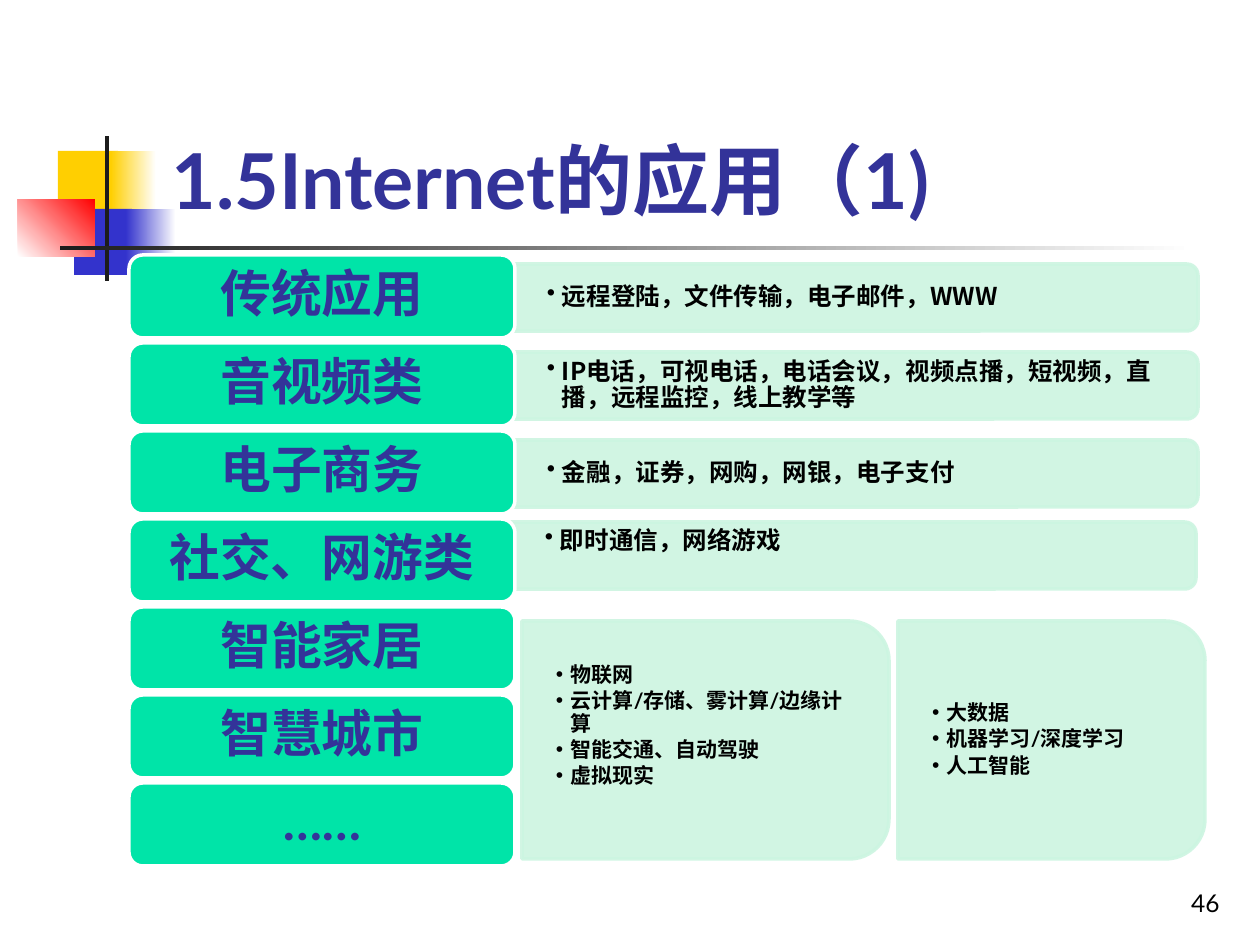
"""Build the slide on Internet applications, with category labels and example panels."""
from dataclasses import dataclass
from typing import NamedTuple

from lxml import etree
from pptx import Presentation
from pptx import util as u
from pptx.dml.color import RGBColor
from pptx.enum import shapes, text
from pptx.oxml import ns

EMU_PER_PX = 914400 / 126


@dataclass(frozen=True)
class Theme:
    latin: str = "Lato"
    asian: str = "Noto Sans CJK SC"
    navy: str = "333399"
    black: str = "000000"
    white: str = "FFFFFF"
    dark: str = "1C1C1C"
    yellow: str = "FFCF01"
    blue: str = "3333CC"
    red: str = "FF0000"
    green: str = "00E4A8"
    mint: str = "CCF5E1"
    title_size: int = 44
    label_size: int = 29
    bar_size: int = 14
    card_size: int = 12
    number_size: int = 14


class Box(NamedTuple):
    left: int
    top: int
    width: int
    height: int


@dataclass(frozen=True)
class Ornament:
    box: Box
    colors: tuple[str, ...]
    angle: int = 0


@dataclass(frozen=True)
class Panel:
    box: Box
    items: tuple[str, ...]
    lift: int = 0
    latin: str = "Lato"


THEME = Theme()
ORNAMENTS = (
    Ornament(Box(58, 151, 60, 66), (THEME.yellow,)),
    Ornament(Box(111, 151, 45, 66), (THEME.yellow, THEME.white)),
    Ornament(Box(74, 209, 58, 66), (THEME.blue,)),
    Ornament(Box(126, 209, 50, 66), (THEME.blue, THEME.white)),
    Ornament(Box(18, 199, 77, 58), (THEME.white, THEME.red), 45),
    Ornament(Box(105, 136, 4, 145), (THEME.dark,)),
    Ornament(Box(60, 246, 1134, 4), (THEME.dark, THEME.white)),
)
ROW_PITCH = 88
FIRST_LABEL = Box(129, 255, 386, 83)
LABELS = ("传统应用", "音视频类", "电子商务", "社交、网游类", "智能家居", "智慧城市", "……")
BARS = (
    Panel(Box(513, 264, 685, 67), ("远程登陆，文件传输，电子邮件，WWW",), latin=THEME.asian),
    Panel(Box(513, 264 + ROW_PITCH, 685, 67),
          ("IP电话，可视电话，电话会议，视频点播，短视频，直播，远程监控，线上教学等",),
          latin=THEME.asian),
    Panel(Box(513, 264 + 2 * ROW_PITCH, 685, 67), ("金融，证券，网购，网银，电子支付",)),
    Panel(Box(511, 522, 685, 67), ("即时通信，网络游戏",), lift=14),
)
CARDS = (
    Panel(Box(522, 621, 367, 238),
          ("物联网", "云计算/存储、雾计算/边缘计算", "智能交通、自动驾驶", "虚拟现实"), lift=14),
    Panel(Box(898, 621, 307, 238), ("大数据", "机器学习/深度学习", "人工智能")),
)


def px(length: float) -> u.Emu:
    return u.Emu(round(length * EMU_PER_PX))


def place(shape, box: Box) -> None:
    shape.left, shape.top, shape.width, shape.height = map(px, box)


def bring_forward(shape) -> None:
    shape.element.getparent().append(shape.element)


def set_font(para, size: int, color: str, bold: bool = True, latin: str = THEME.latin) -> None:
    font = para.font
    font.size, font.bold, font.name = u.Pt(size), bold, latin
    font.color.rgb = RGBColor.from_string(color)
    properties = para._p.pPr.find(ns.qn("a:defRPr"))
    etree.SubElement(properties, ns.qn("a:ea"), typeface=THEME.asian)


def set_frame(shape, anchor: text.MSO_ANCHOR):
    frame = shape.text_frame
    frame.word_wrap = True
    frame.auto_size = text.MSO_AUTO_SIZE.NONE
    frame.vertical_anchor = anchor
    return frame


def add_filled(slide, kind: shapes.MSO_SHAPE, box: Box, color: str):
    shape = slide.shapes.add_shape(kind, *map(px, box))
    shape.shadow.inherit = False
    shape.fill.solid()
    shape.fill.fore_color.rgb = RGBColor.from_string(color)
    shape.line.fill.background()
    return shape


def set_line(shape, color: str) -> None:
    shape.line.color.rgb = RGBColor.from_string(color)
    shape.line.width = u.Pt(2)


def draw_ornament(slide, ornament: Ornament) -> None:
    shape = add_filled(slide, shapes.MSO_SHAPE.RECTANGLE, ornament.box, ornament.colors[0])
    if len(ornament.colors) > 1:
        shape.fill.gradient()
        shape.fill.gradient_angle = ornament.angle
        for stop, color in zip(shape.fill.gradient_stops, ornament.colors):
            stop.color.rgb = RGBColor.from_string(color)


def draw_label(slide, box: Box, caption: str) -> None:
    shape = add_filled(slide, shapes.MSO_SHAPE.ROUNDED_RECTANGLE, box, THEME.green)
    set_line(shape, THEME.white)
    para = set_frame(shape, text.MSO_ANCHOR.MIDDLE).paragraphs[0]
    para.text = caption
    para.alignment = text.PP_ALIGN.CENTER
    para.line_spacing = 0.9
    set_font(para, THEME.label_size, THEME.navy)


def draw_panel(slide, box: Box) -> None:
    center_x, center_y = box.left + box.width / 2, box.top + box.height / 2
    upright = Box(center_x - box.height / 2, center_y - box.width / 2, box.height, box.width)
    shape = add_filled(slide, shapes.MSO_SHAPE.ROUND_2_SAME_RECTANGLE, upright, THEME.mint)
    shape.rotation = 90
    set_line(shape, THEME.mint)
    for color in shape.element.spPr.iter(ns.qn("a:srgbClr")):
        etree.SubElement(color, ns.qn("a:alpha"), val="90000")


def write_list(holder, panel: Panel, size: int) -> None:
    place(holder, panel.box._replace(top=panel.box.top - panel.lift))
    frame = set_frame(holder, text.MSO_ANCHOR.MIDDLE)
    frame.margin_left = frame.margin_right = px(34)
    frame.margin_top = frame.margin_bottom = px(18)
    for index, item in enumerate(panel.items):
        para = frame.add_paragraph() if index else frame.paragraphs[0]
        para.text = item
        para.alignment = text.PP_ALIGN.LEFT
        para.line_spacing = 0.9
        para.space_before, para.space_after = u.Pt(0), u.Pt(2)
        properties = para._p.get_or_add_pPr()
        properties.set("marL", str(px(15)))
        properties.set("indent", str(-px(15)))
        etree.SubElement(properties, ns.qn("a:buChar"), char="•")
        set_font(para, size, THEME.black, latin=panel.latin)


def write_line(holder, box: Box, words: str, align: text.PP_ALIGN, size: int, color: str,
               bold: bool) -> None:
    place(holder, box)
    para = set_frame(holder, text.MSO_ANCHOR.BOTTOM).paragraphs[0]
    para.text = words
    para.alignment = align
    set_font(para, size, color, bold)


def main() -> None:
    deck = Presentation()
    deck.slide_width, deck.slide_height = px(1260), px(945)
    page = deck.slides.add_slide(deck.slide_layouts[3])
    title, *bodies = page.placeholders
    for ornament in ORNAMENTS:
        draw_ornament(page, ornament)
    write_line(title, Box(159, 29, 1074, 202), "1.5Internet的应用（1)", text.PP_ALIGN.LEFT,
               THEME.title_size, THEME.navy, True)
    bring_forward(title)
    for bar in BARS:
        draw_panel(page, bar.box)
        write_list(page.shapes.add_textbox(*map(px, bar.box)), bar, THEME.bar_size)
    for row, caption in enumerate(LABELS):
        draw_label(page, FIRST_LABEL._replace(top=FIRST_LABEL.top + row * ROW_PITCH), caption)
    for body, card in zip(bodies, CARDS):
        draw_panel(page, card.box)
        write_list(body, card, THEME.card_size)
        bring_forward(body)
    number_box = Box(970, 861, 262, 63)
    write_line(page.shapes.add_textbox(*map(px, number_box)), number_box, "46",
               text.PP_ALIGN.RIGHT, THEME.number_size, THEME.black, False)
    deck.save("out.pptx")


if __name__ == "__main__":
    main()
